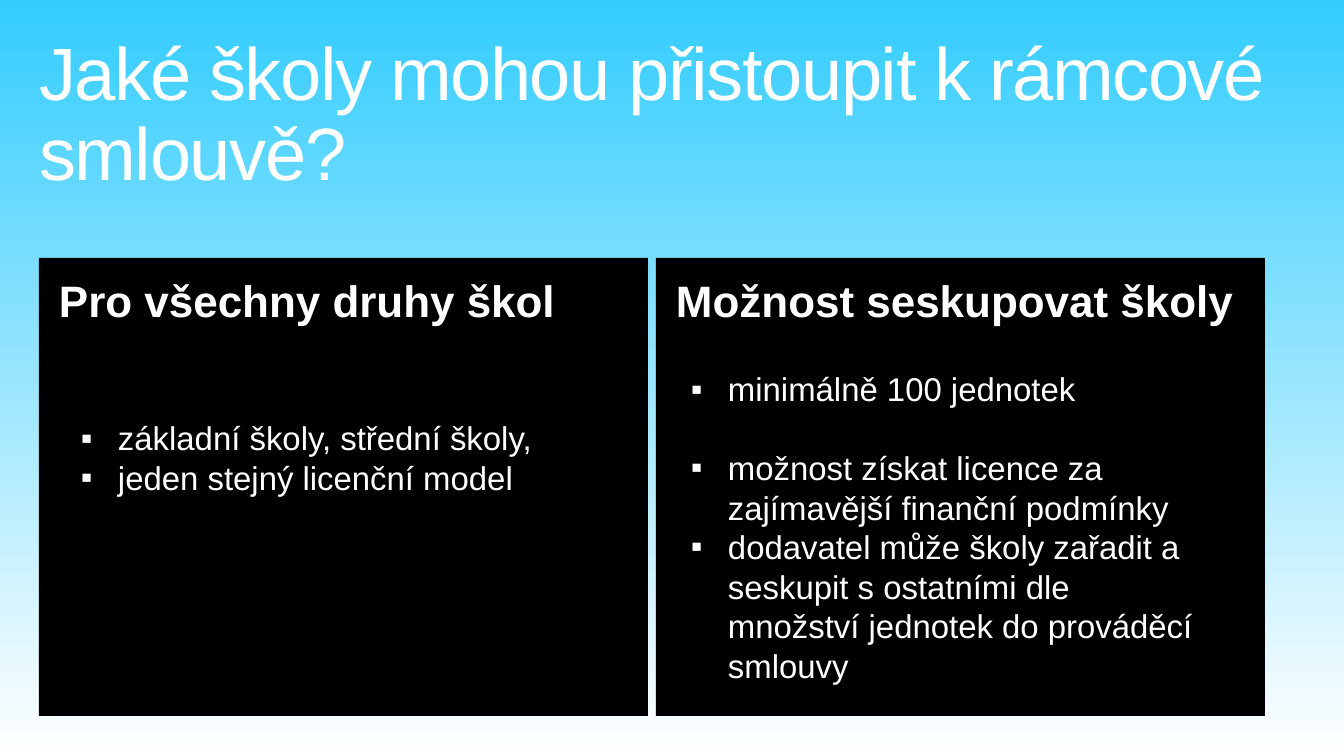
from lxml.etree import SubElement
from pptx import Presentation
from pptx.dml.color import RGBColor
from pptx.enum.shapes import MSO_SHAPE
from pptx.enum.text import MSO_ANCHOR, MSO_AUTO_SIZE, PP_ALIGN
from pptx.oxml.ns import qn
from pptx.util import Emu, Pt

SKY = RGBColor(0x33, 0xCC, 0xFF)
WHITE = RGBColor(0xFF, 0xFF, 0xFF)
BLACK = RGBColor(0x00, 0x00, 0x00)
FONT = "Arial"

PANEL_LEFT, PANEL_TOP = 39, 258
PANEL_WIDTH, PANEL_HEIGHT, PANEL_GAP = 609, 458, 8
BULLET_INDENT = 37

# heading, list box, list items as (text, points of space after)
COLUMNS = [
    ("Pro všechny druhy škol", (61, 402, 528, 112),
     [("základní školy, střední školy,", 0),
      ("jeden stejný licenční model", 0)]),
    ("Možnost seskupovat školy", (671, 353, 544, 351),
     [("minimálně 100 jednotek", 28),
      ("možnost získat licence za zajímavější finanční podmínky", 0),
      ("dodavatel může školy zařadit a seskupit s ostatními dle "
       "množství jednotek do prováděcí smlouvy", 0)]),
]


def px(length):
    return Emu(round(length * 914400 / 100.8))


def place(shape, left, top, width, height):
    shape.left, shape.top = px(left), px(top)
    shape.width, shape.height = px(width), px(height)


def set_frame(frame, inset_x, inset_y):
    frame.word_wrap = True
    frame.auto_size = MSO_AUTO_SIZE.NONE
    frame.vertical_anchor = MSO_ANCHOR.TOP
    frame.margin_left = frame.margin_right = px(inset_x)
    frame.margin_top = frame.margin_bottom = px(inset_y)


def format_paragraph(paragraph, size, bold=False, line_spacing=1.0, after=0):
    paragraph.alignment = PP_ALIGN.LEFT
    paragraph.line_spacing = line_spacing
    paragraph.space_before = Pt(0)
    paragraph.space_after = Pt(after)
    for run in paragraph.runs:
        run.font.name = FONT
        run.font.size = Pt(size)
        run.font.bold = bold
        run.font.color.rgb = WHITE


def add_bullet(paragraph):
    properties = paragraph._p.get_or_add_pPr()
    properties.set("marL", str(px(BULLET_INDENT)))
    properties.set("indent", str(-px(BULLET_INDENT)))
    SubElement(properties, qn("a:buFont"), typeface=FONT)
    SubElement(properties, qn("a:buChar"), char="▪")


def paint_background(slide):
    fill = slide.background.fill
    fill.gradient()
    fill.gradient_angle = 270
    for stop, color, position in zip(fill.gradient_stops, (SKY, WHITE), (0, 1)):
        stop.color.rgb = color
        stop.position = position


def fill_title(title, text):
    place(title, 29, 32, 1285, 158)
    frame = title.text_frame
    frame.text = text
    set_frame(frame, 10, 5)
    format_paragraph(frame.paragraphs[0], 52.9, line_spacing=0.9)
    for run in frame.paragraphs[0].runs:
        run.font._element.set("spc", "-100")


def add_panel(slide, column, heading):
    panel = slide.shapes.add_shape(MSO_SHAPE.RECTANGLE, 0, 0, 0, 0)
    place(panel, PANEL_LEFT + column * (PANEL_WIDTH + PANEL_GAP), PANEL_TOP,
          PANEL_WIDTH, PANEL_HEIGHT)
    panel.shadow.inherit = False
    panel.fill.solid()
    panel.fill.fore_color.rgb = BLACK
    panel.line.fill.background()
    panel.text_frame.text = heading
    set_frame(panel.text_frame, 20, 16)
    format_paragraph(panel.text_frame.paragraphs[0], 31.4, bold=True)


def fill_list(body, box, items):
    place(body, *box)
    frame = body.text_frame
    frame.text = "\n".join(text for text, _ in items)
    set_frame(frame, 20, 16)
    for paragraph, (_, after) in zip(frame.paragraphs, items):
        format_paragraph(paragraph, 23.5, after=after)
        add_bullet(paragraph)


def main():
    presentation = Presentation()
    presentation.slide_width, presentation.slide_height = px(1344), px(756)
    slide = presentation.slides.add_slide(presentation.slide_layouts[3])
    paint_background(slide)

    # Title
    fill_title(slide.shapes.title, "Jaké školy mohou přistoupit k rámcové smlouvě?")

    # Panels with their lists in front
    bodies = [slide.placeholders[1], slide.placeholders[2]]
    for column, (heading, box, items) in enumerate(COLUMNS):
        add_panel(slide, column, heading)
        fill_list(bodies[column], box, items)
        slide.shapes._spTree.append(bodies[column]._element)

    presentation.save("out.pptx")


if __name__ == "__main__":
    main()
